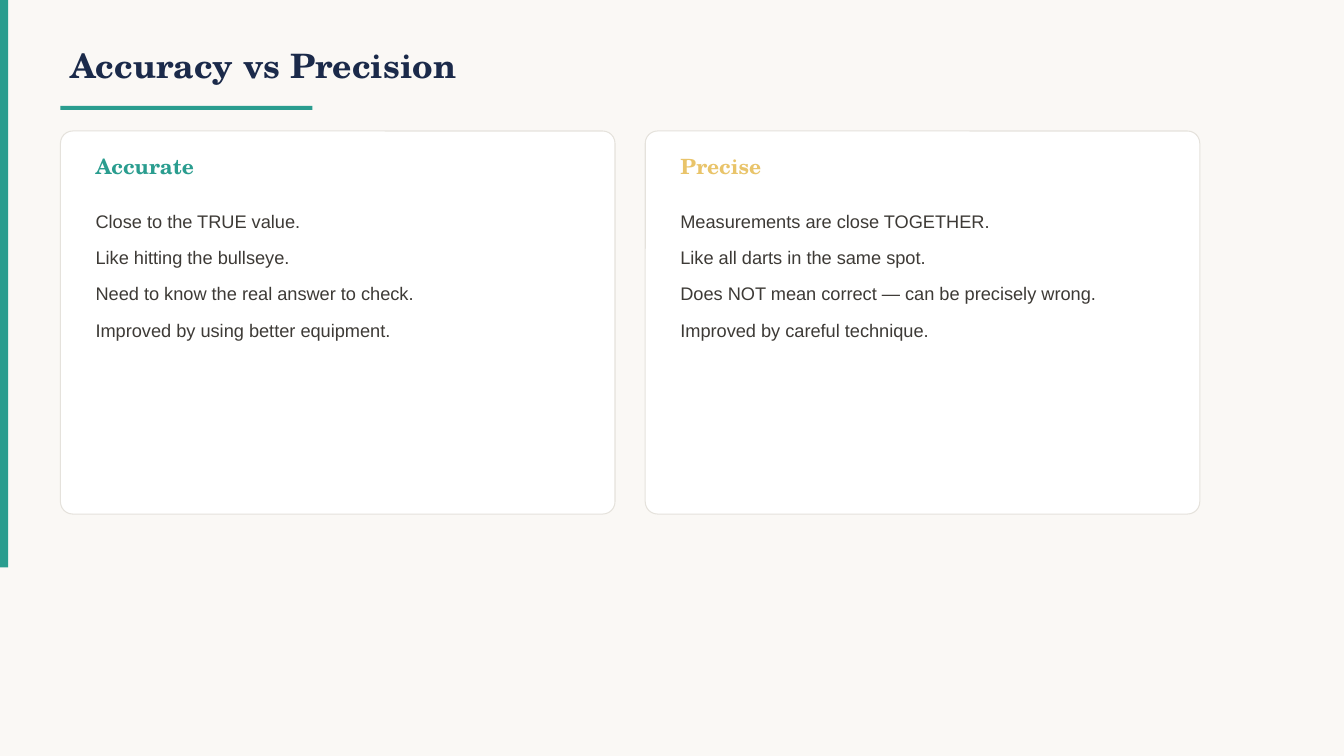
from dataclasses import dataclass

from pptx import Presentation
from pptx.dml.color import RGBColor
from pptx.enum.shapes import MSO_SHAPE
from pptx.enum.text import MSO_ANCHOR, MSO_AUTO_SIZE, PP_ALIGN
from pptx.shapes.autoshape import Shape
from pptx.slide import Slide
from pptx.text.text import TextFrame
from pptx.util import Emu, Pt

SCALE = 9144


@dataclass(frozen=True)
class Theme:
    page: str = "FAF8F5"
    white: str = "FFFFFF"
    edge: str = "E5E2DC"
    navy: str = "1B2A4A"
    teal: str = "2A9D8F"
    gold: str = "E9C46A"
    ink: str = "3D3A36"
    serif: str = "TeX Gyre Schola"
    sans: str = "Arial"
    title: int = 24
    head: int = 15
    body: int = 13


@dataclass(frozen=True)
class Box:
    left: int
    top: int
    width: int
    height: int

    def emu(self) -> tuple[Emu, Emu, Emu, Emu]:
        return px(self.left), px(self.top), px(self.width), px(self.height)


@dataclass(frozen=True)
class Style:
    font: str
    size: int
    color: str
    bold: bool = False
    anchor: MSO_ANCHOR = MSO_ANCHOR.MIDDLE
    lead: float | None = None
    after: int | None = None


@dataclass(frozen=True)
class Card:
    head: str
    color: str
    lines: tuple[str, ...]


THEME = Theme()
BODY = Style(THEME.sans, THEME.body, THEME.ink, anchor=MSO_ANCHOR.TOP, lead=1.4, after=4)
BARS = (Box(0, 0, 8, 563), Box(60, 105, 250, 4))
LEFT, WIDTH, GAP = 60, 550, 30
CARDS = (
    Card("Accurate", THEME.teal, (
        "Close to the TRUE value.",
        "Like hitting the bullseye.",
        "Need to know the real answer to check.",
        "Improved by using better equipment.",
    )),
    Card("Precise", THEME.gold, (
        "Measurements are close TOGETHER.",
        "Like all darts in the same spot.",
        "Does NOT mean correct — can be precisely wrong.",
        "Improved by careful technique.",
    )),
)


def px(count: int) -> Emu:
    return Emu(count * SCALE)


def rgb(code: str) -> RGBColor:
    return RGBColor.from_string(code)


def write(frame: TextFrame, lines: tuple[str, ...], style: Style) -> None:
    frame.word_wrap = True
    frame.auto_size = MSO_AUTO_SIZE.NONE
    frame.vertical_anchor = style.anchor
    frame.text = "\n".join(lines)
    for para in frame.paragraphs:
        para.alignment = PP_ALIGN.LEFT
        if style.lead is not None:
            para.line_spacing = style.lead
        if style.after is not None:
            para.space_after = Pt(style.after)
        para.font.name = style.font
        para.font.size = Pt(style.size)
        para.font.bold = style.bold
        para.font.color.rgb = rgb(style.color)


def add_text(slide: Slide, box: Box, lines: tuple[str, ...], style: Style) -> None:
    write(slide.shapes.add_textbox(*box.emu()).text_frame, lines, style)


def add_shape(slide: Slide, kind: MSO_SHAPE, box: Box, fill: str) -> Shape:
    shape = slide.shapes.add_shape(kind, *box.emu())
    shape.shadow.inherit = False
    shape.fill.solid()
    shape.fill.fore_color.rgb = rgb(fill)
    shape.line.fill.background()
    return shape


def add_title(slide: Slide, text: str) -> None:
    title = slide.shapes.title
    title.left, title.top, title.width, title.height = Box(60, 30, 1000, 70).emu()
    write(title.text_frame, (text,), Style(THEME.serif, THEME.title, THEME.navy, True))


def add_card(slide: Slide, left: int, card: Card) -> None:
    panel = add_shape(
        slide, MSO_SHAPE.ROUNDED_RECTANGLE, Box(left, 130, WIDTH, 380), THEME.white
    )
    panel.adjustments[0] = 0.032
    panel.line.color.rgb = rgb(THEME.edge)
    panel.line.width = Pt(0.75)
    inset = left + 25
    head = Style(THEME.serif, THEME.head, card.color, True)
    add_text(slide, Box(inset, 145, 500, 40), (card.head,), head)
    add_text(slide, Box(inset, 195, 500, 290), card.lines, BODY)


def main() -> None:
    deck = Presentation()
    deck.slide_width, deck.slide_height = px(1333), px(750)
    slide = deck.slides.add_slide(deck.slide_layouts.get_by_name("Title Only"))
    slide.background.fill.solid()
    slide.background.fill.fore_color.rgb = rgb(THEME.page)
    add_title(slide, "Accuracy vs Precision")
    for bar in BARS:
        add_shape(slide, MSO_SHAPE.RECTANGLE, bar, THEME.teal)
    for index, card in enumerate(CARDS):
        add_card(slide, LEFT + index * (WIDTH + GAP), card)
    deck.save("out.pptx")


if __name__ == "__main__":
    main()
